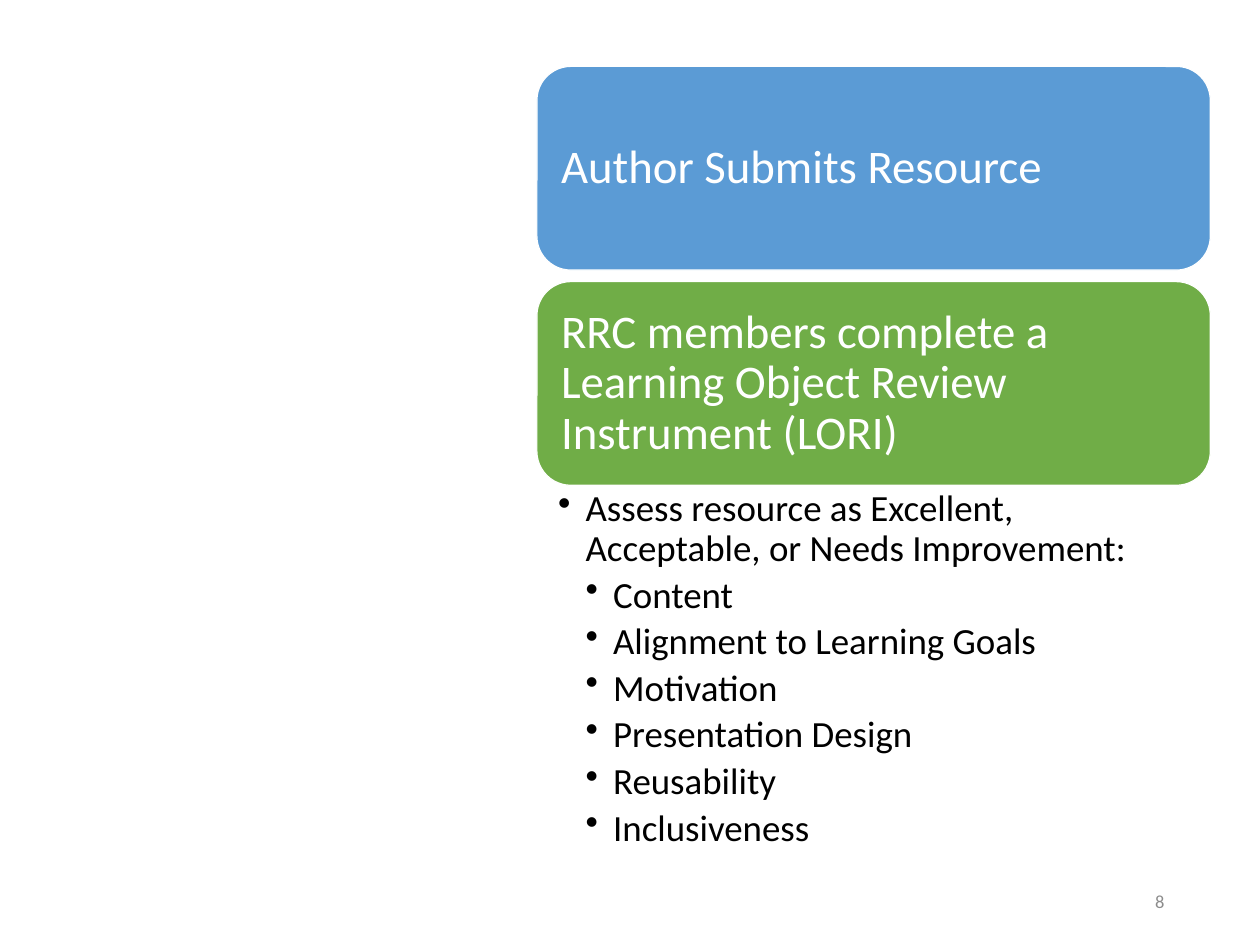
from lxml.etree import SubElement
from pptx import Presentation
from pptx.dml.color import RGBColor
from pptx.enum.shapes import MSO_SHAPE
from pptx.enum.text import MSO_ANCHOR, PP_ALIGN
from pptx.oxml.ns import qn
from pptx.util import Inches, Pt

WHITE = RGBColor(0xFF, 0xFF, 0xFF)
BLACK = RGBColor(0x00, 0x00, 0x00)
GRAY = RGBColor(0x8C, 0x8C, 0x8C)
BLUE = RGBColor(0x5B, 0x9B, 0xD5)
GREEN = RGBColor(0x70, 0xAD, 0x47)

LEFT, WIDTH = 6.06, 7.6
STEP_TOP, STEP_HEIGHT, STEP_PITCH = 0.75, 2.3, 2.43
INDENT = 0.31

STEPS = [
    ("Author Submits Resource", BLUE),
    ("RRC members complete a Learning Object Review Instrument (LORI)", GREEN),
]
CRITERIA = [
    ("Assess resource as Excellent, Acceptable, or Needs Improvement:", 1),
    ("Content", 2),
    ("Alignment to Learning Goals", 2),
    ("Motivation", 2),
    ("Presentation Design", 2),
    ("Reusability", 2),
    ("Inclusiveness", 2),
]


def set_margins(frame, left, top, right, bottom):
    frame.word_wrap = True
    frame.margin_left, frame.margin_top = Inches(left), Inches(top)
    frame.margin_right, frame.margin_bottom = Inches(right), Inches(bottom)


def write(paragraph, text, size, color, align=PP_ALIGN.LEFT):
    paragraph.text = text
    paragraph.alignment = align
    paragraph.font.name = "Calibri"
    paragraph.font.size = Pt(size)
    paragraph.font.color.rgb = color


prs = Presentation()
prs.slide_width, prs.slide_height = Inches(14.22), Inches(10.67)
slide = prs.slides.add_slide(prs.slide_layouts[6])

page_number = slide.shapes.add_textbox(
    Inches(12.51), Inches(9.89), Inches(0.73), Inches(0.57)
).text_frame
set_margins(page_number, 0.1, 0.05, 0.1, 0.05)
page_number.vertical_anchor = MSO_ANCHOR.MIDDLE
write(page_number.paragraphs[0], "8", 15, GRAY, PP_ALIGN.RIGHT)

for row, (label, color) in enumerate(STEPS):
    step = slide.shapes.add_shape(
        MSO_SHAPE.ROUNDED_RECTANGLE,
        Inches(LEFT), Inches(STEP_TOP + row * STEP_PITCH),
        Inches(WIDTH), Inches(STEP_HEIGHT),
    )
    step.shadow.inherit = False
    step.fill.solid()
    step.fill.fore_color.rgb = color
    step.line.color.rgb = WHITE
    step.line.width = Pt(1)
    set_margins(step.text_frame, 0.16, 0.16, 0.16, 0.16)
    step.text_frame.vertical_anchor = MSO_ANCHOR.MIDDLE
    heading = step.text_frame.paragraphs[0]
    write(heading, label, 38, WHITE)
    heading.line_spacing = 0.9

criteria = slide.shapes.add_textbox(
    Inches(LEFT), Inches(STEP_TOP + STEP_PITCH + STEP_HEIGHT), Inches(WIDTH), Inches(4.39)
).text_frame
set_margins(criteria, 0.24, 0.05, 0.3, 0.05)
for index, (text, level) in enumerate(CRITERIA):
    criterion = criteria.add_paragraph() if index else criteria.paragraphs[0]
    write(criterion, text, 30, BLACK)
    criterion.level = level
    criterion.line_spacing = 0.9
    criterion.space_after = Pt(5.5)
    properties = criterion.font._element.getparent()
    properties.set("marL", str(Inches(INDENT * level)))
    properties.set("indent", str(-Inches(INDENT)))
    bullet = SubElement(properties, qn("a:buChar"), char="•")
    properties.find(qn("a:defRPr")).addprevious(bullet)

prs.save("out.pptx")
